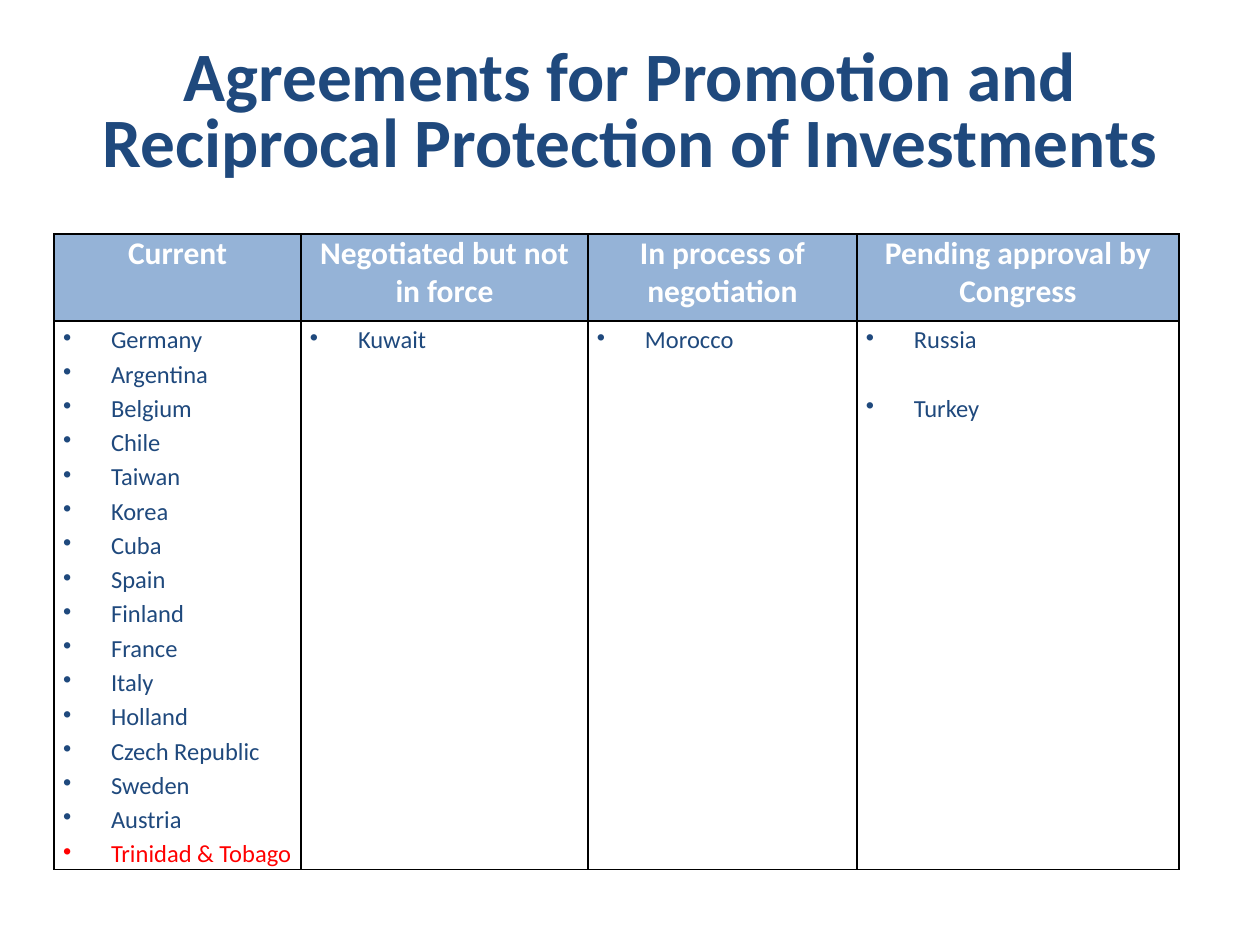
import pptx
import pptx.util
import pptx.dml.color
import pptx.enum.text
import pptx.oxml
import pptx.oxml.ns

TITLE = "Agreements for Promotion and Reciprocal Protection of Investments"
GROUPS = [
    ("Current", 247, [
        "Germany", "Argentina", "Belgium", "Chile", "Taiwan", "Korea",
        "Cuba", "Spain", "Finland", "France", "Italy", "Holland",
        "Czech Republic", "Sweden", "Austria", "Trinidad & Tobago"]),
    ("Negotiated but not in force", 287, ["Kuwait"]),
    ("In process of negotiation", 269, ["Morocco"]),
    ("Pending approval by Congress", 322, ["Russia", "Turkey"]),
]
NEW = "Trinidad & Tobago"
GAPS = {"Turkey": 19.5}
ROWS = [87, 548]
COLORS = {"navy": "1F497D", "head": "95B3D7", "white": "FFFFFF",
          "red": "FF0000", "line": "000000"}
FONT = "Calibri"
ALIGN = pptx.enum.text.PP_ALIGN
Pt = pptx.util.Pt


def px(count):
    return pptx.util.Emu(round(count * 914400 / 126))


def rgb(name):
    return pptx.dml.color.RGBColor.from_string(COLORS[name])


def style(para, size, color, bold, align):
    para.alignment = align
    for run in para.runs:
        font = run.font
        font.name, font.size, font.bold = FONT, Pt(size), bold
        font.color.rgb = rgb(color)


def bullet(para):
    props = para._p.get_or_add_pPr()
    props.set("marL", str(px(48)))
    props.set("indent", str(-px(48)))
    mark = pptx.oxml.parse_xml(
        f'<a:buChar {pptx.oxml.ns.nsdecls("a")} char="•"/>')
    props.append(mark)


def border(cell):
    props = cell._tc.get_or_add_tcPr()
    for spot, side in enumerate("LRTB"):
        line = pptx.oxml.parse_xml(
            f'<a:ln{side} {pptx.oxml.ns.nsdecls("a")} w="{Pt(1)}">'
            f'<a:solidFill><a:srgbClr val="{COLORS["line"]}"/></a:solidFill>'
            f'</a:ln{side}>')
        props.insert(spot, line)


def frame(cell):
    cell.margin_left = cell.margin_right = px(9)
    cell.margin_top = cell.margin_bottom = 0
    border(cell)


def main():
    deck = pptx.Presentation()
    deck.slide_width, deck.slide_height = px(1260), px(945)
    slide = deck.slides.add_slide(deck.slide_layouts[5])

    title = slide.shapes.title
    title.left, title.top = px(63), px(36)
    title.width, title.height = px(1134), px(157)
    text = title.text_frame
    text.text = TITLE
    text.word_wrap = True
    text.auto_size = pptx.enum.text.MSO_AUTO_SIZE.NONE
    text.vertical_anchor = pptx.enum.text.MSO_ANCHOR.MIDDLE
    text.paragraphs[0].line_spacing = 0.8
    style(text.paragraphs[0], 39.6, "navy", True, ALIGN.CENTER)

    wide = sum(width for _, width, _ in GROUPS)
    table = slide.shapes.add_table(
        len(ROWS), len(GROUPS), px(54), px(234), px(wide), px(sum(ROWS))).table
    for row, high in zip(table.rows, ROWS):
        row.height = px(high)

    for col, (name, width, lands) in enumerate(GROUPS):
        table.columns[col].width = px(width)
        head, body = table.cell(0, col), table.cell(1, col)
        head.text_frame.text = name
        style(head.text_frame.paragraphs[0], 18, "white", True, ALIGN.CENTER)
        head.fill.solid()
        head.fill.fore_color.rgb = rgb("head")
        body.text_frame.text = "\n".join(lands)
        for para, land in zip(body.text_frame.paragraphs, lands):
            para.line_spacing = 1.15
            if land in GAPS:
                para.space_before = Pt(GAPS[land])
            bullet(para)
            style(para, 14, "red" if land == NEW else "navy", False,
                  ALIGN.JUSTIFY)
        body.fill.background()
        frame(head)
        frame(body)

    deck.save("out.pptx")


if __name__ == "__main__":
    main()
